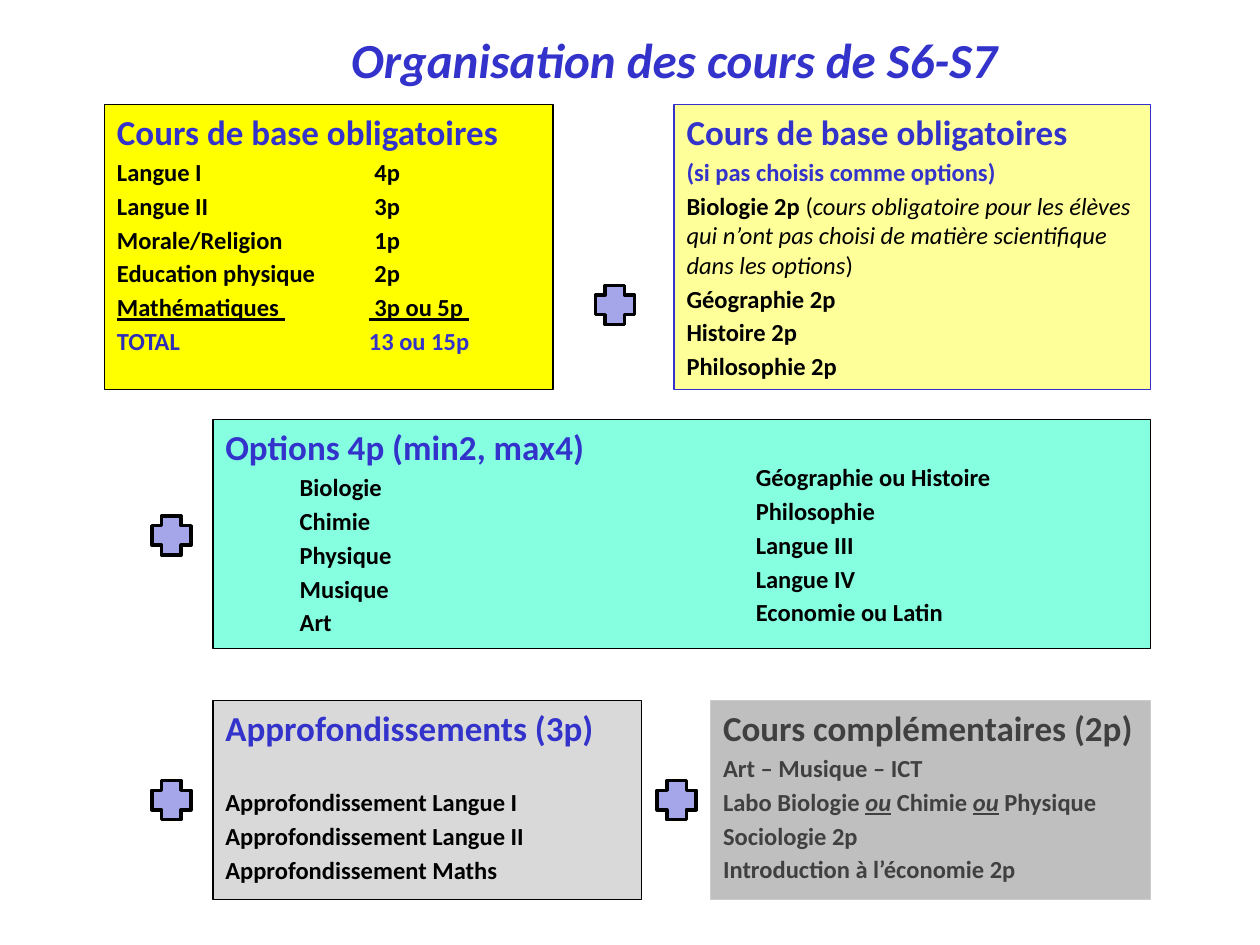
from lxml import etree
from pptx import Presentation
from pptx.dml.color import RGBColor
from pptx.enum.shapes import MSO_SHAPE
from pptx.enum.text import MSO_ANCHOR, PP_ALIGN
from pptx.oxml.ns import qn
from pptx.util import Inches, Pt

RECTANGLE, PLUS = MSO_SHAPE.RECTANGLE, MSO_SHAPE.CROSS
LEFT, CENTER = PP_ALIGN.LEFT, PP_ALIGN.CENTER
TOP, MIDDLE = MSO_ANCHOR.TOP, MSO_ANCHOR.MIDDLE

# Palette, type and layout (inches)
BLUE, BLACK, GREY = "3333CC", "000000", "404040"
FONT, HEAD_SIZE, BODY_SIZE, LINE_GAP = "Calibri", 20, 14, 2.5
OUTER_LEFT, INNER_LEFT, RIGHT = 0.83, 1.69, 9.13
ROW_BASE, ROW_OPTIONS, ROW_EXTRA = (0.83, 2.26), (3.33, 1.82), (5.56, 1.58)
PLUS_SIZE = 0.31
PLUS_CENTERS = [(4.88, 2.42), (1.36, 4.25), (1.36, 6.35), (5.37, 6.35)]


def color(value):
    return RGBColor.from_string(value)


def add_line(frame, content, size=BODY_SIZE, ink=BLACK, bold=True, italic=False,
             underline=False, align=LEFT, before=LINE_GAP, indent=0, tab=None):
    """Add a paragraph; content is a string or a list of (text, format) spans."""
    para = frame.paragraphs[0]
    if para.runs:
        para = frame.add_paragraph()
        para.space_before = Pt(before)
    para.alignment = align
    properties = para._p.get_or_add_pPr()
    if indent:
        properties.set("marL", str(Inches(indent)))
    if tab:
        stops = etree.SubElement(properties, qn("a:tabLst"))
        etree.SubElement(stops, qn("a:tab"), pos=str(Inches(tab)), algn="l")
    spans = [(content, {})] if isinstance(content, str) else content
    for text, changes in spans:
        look = {"ink": ink, "bold": bold, "italic": italic,
                "underline": underline, **changes}
        span = para.add_run()
        span.text = text
        span.font.name, span.font.size = FONT, Pt(size)
        span.font.color.rgb = color(look["ink"])
        span.font.bold, span.font.italic = look["bold"], look["italic"]
        span.font.underline = look["underline"]


def add_lines(frame, lines, **format):
    for line in lines:
        add_line(frame, line, **format)


def add_text_box(page, left, top, width, height, anchor=TOP):
    frame = page.shapes.add_textbox(*map(Inches, (left, top, width, height))).text_frame
    frame.word_wrap = True
    frame.vertical_anchor = anchor
    return frame


def add_figure(page, kind, left, top, width, height, fill, line, weight):
    shape = page.shapes.add_shape(kind, *map(Inches, (left, top, width, height)))
    shape.shadow.inherit = False
    shape.fill.solid()
    shape.fill.fore_color.rgb = color(fill)
    shape.line.color.rgb = color(line)
    shape.line.width = Pt(weight)
    return shape


def add_panel(page, left, right, row, heading, fill, line=BLACK, ink=BLUE):
    """Add a coloured block between two edges, with its heading."""
    top, height = row
    shape = add_figure(page, RECTANGLE, left, top, right - left, height, fill, line, 0.75)
    frame = shape.text_frame
    frame.word_wrap = True
    frame.vertical_anchor = TOP
    add_line(frame, heading, size=HEAD_SIZE, ink=ink)
    return frame


def add_plus(page, center_x, center_y):
    half = PLUS_SIZE / 2
    add_figure(page, PLUS, center_x - half, center_y - half, PLUS_SIZE, PLUS_SIZE,
               "A5A5E9", BLACK, 2)


def add_base_courses(page):
    frame = add_panel(page, OUTER_LEFT, 4.39, ROW_BASE,
                      "Cours de base obligatoires", "FFFF00")
    add_lines(frame, ["Langue I\t 4p", "Langue II\t 3p", "Morale/Religion\t 1p",
                      "Education physique\t 2p"], tab=2)
    add_line(frame, "Mathématiques \t 3p ou 5p ", underline=True, tab=2)
    add_line(frame, [("TOTAL\t", {"ink": "2D2DB9"}), ("13 ou 15p", {})],
             ink=BLUE, tab=2)


def add_conditional_courses(page):
    frame = add_panel(page, 5.35, RIGHT, ROW_BASE,
                      "Cours de base obligatoires", "FFFF99", line=BLUE)
    add_line(frame, "(si pas choisis comme options)", ink=BLUE)
    add_line(frame, [
        ("Biologie 2p ", {"bold": True}),
        ("(", {}),
        ("cours obligatoire pour les élèves qui n’ont pas choisi de matière "
         "scientifique dans les options", {"italic": True}),
        (")", {}),
    ], bold=False)
    add_lines(frame, ["Géographie 2p", "Histoire 2p", "Philosophie 2p"])


def add_options(page):
    frame = add_panel(page, INNER_LEFT, RIGHT, ROW_OPTIONS,
                      "Options 4p (min2, max4)", "85FFE0")
    add_lines(frame, ["Biologie", "Chimie", "Physique", "Musique", "Art"], indent=0.59)
    second_column = add_text_box(page, 5.9, 3.62, 3.2, 1.45)
    add_lines(second_column, ["Géographie ou Histoire", "Philosophie", "Langue III",
                              "Langue IV", "Economie ou Latin"])


def add_extra_courses(page):
    frame = add_panel(page, INNER_LEFT, 5.09, ROW_EXTRA,
                      "Approfondissements (3p)", "D9D9D9")
    add_line(frame, "Approfondissement Langue I", before=22)
    add_lines(frame, ["Approfondissement Langue II", "Approfondissement Maths"])

    frame = add_panel(page, 5.64, RIGHT, ROW_EXTRA, "Cours complémentaires (2p)",
                      "BFBFBF", line="CCCCCC", ink=GREY)
    either = ("ou", {"italic": True, "underline": True})
    add_lines(frame, [
        "Art – Musique – ICT",
        [("Labo Biologie ", {}), either, (" Chimie ", {}), either, (" Physique", {})],
        "Sociologie 2p",
        "Introduction à l’économie 2p",
    ], ink=GREY)


def main():
    deck = Presentation()
    deck.slide_width, deck.slide_height = Inches(10), Inches(7.5)
    page = deck.slides.add_slide(deck.slide_layouts[6])

    # Title
    title = add_text_box(page, 1.1, 0.11, 8.5, 0.72, anchor=MIDDLE)
    add_line(title, "Organisation des cours de S6-S7", size=28, ink=BLUE,
             italic=True, align=CENTER)

    # Course blocks, row by row
    add_base_courses(page)
    add_conditional_courses(page)
    add_options(page)
    add_extra_courses(page)

    # Plus signs joining the blocks
    for center in PLUS_CENTERS:
        add_plus(page, *center)

    deck.save("out.pptx")


if __name__ == "__main__":
    main()
